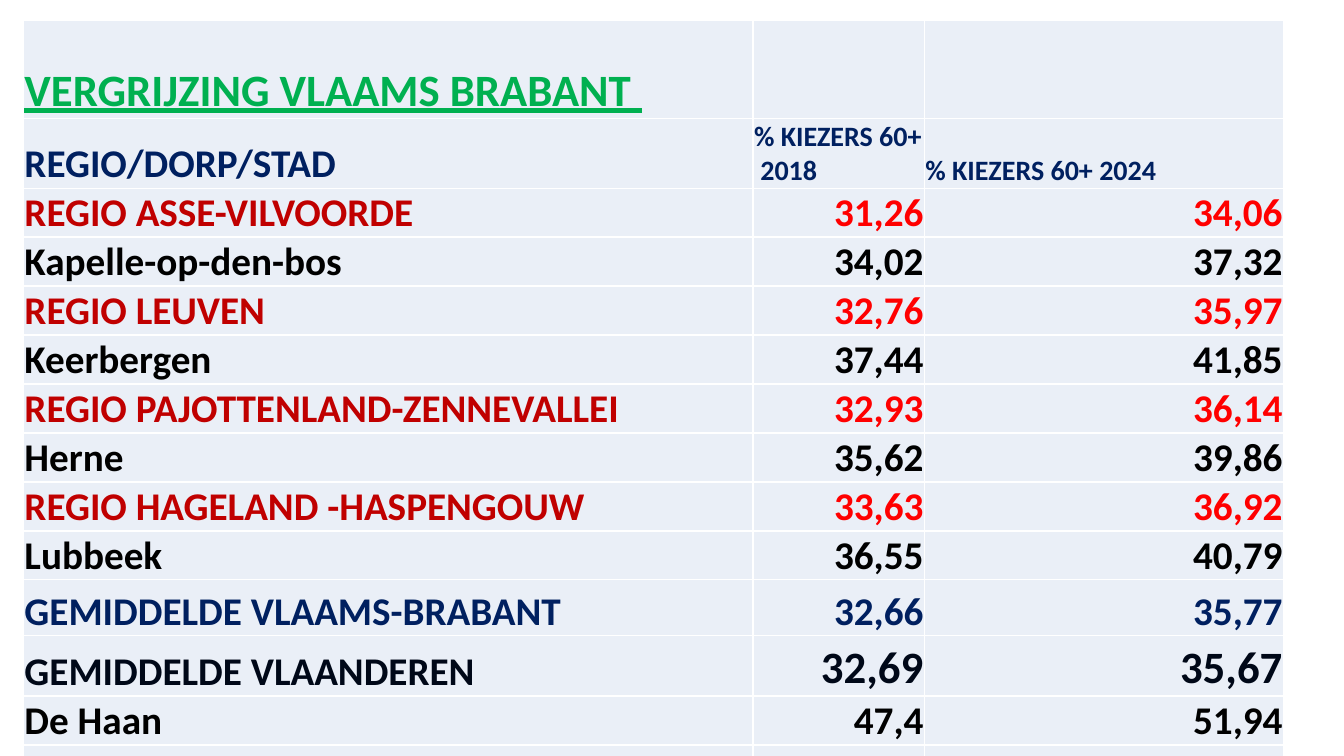
from lxml import etree
from pptx import Presentation
from pptx.dml.color import RGBColor
from pptx.enum.text import MSO_ANCHOR, PP_ALIGN
from pptx.oxml.ns import qn
from pptx.util import Pt

BOTTOM = MSO_ANCHOR.BOTTOM
LEFT, RIGHT = PP_ALIGN.LEFT, PP_ALIGN.RIGHT
FONT = "Calibri"
GREEN, NAVY, DARK_RED, RED = "00B050", "002060", "C00000", "FF0000"
BLACK, INK, WHITE, PALE_BLUE = "000000", "000818", "FFFFFF", "EAEFF7"

COLUMN_SHARES = (0.579, 0.136, 0.285)
TITLE_HEIGHT, HEADER_HEIGHT, LINE_HEIGHT, LAST_HEIGHT = 70, 50, 35, 31

TITLE = "VERGRIJZING VLAAMS BRABANT "
HEADERS = ("REGIO/DORP/STAD", "% KIEZERS 60+  2018", "% KIEZERS 60+ 2024")
REGION = (DARK_RED, RED, 28, LINE_HEIGHT)
TOWN = (BLACK, BLACK, 28, LINE_HEIGHT)
PROVINCE = (NAVY, NAVY, 28, 40)
FLANDERS = (INK, INK, 32, 43)
FIGURES = (
    (REGION, "REGIO ASSE-VILVOORDE", "31,26", "34,06"),
    (TOWN, "Kapelle-op-den-bos", "34,02", "37,32"),
    (REGION, "REGIO LEUVEN", "32,76", "35,97"),
    (TOWN, "Keerbergen", "37,44", "41,85"),
    (REGION, "REGIO PAJOTTENLAND-ZENNEVALLEI", "32,93", "36,14"),
    (TOWN, "Herne", "35,62", "39,86"),
    (REGION, "REGIO HAGELAND -HASPENGOUW", "33,63", "36,92"),
    (TOWN, "Lubbeek", "36,55", "40,79"),
    (PROVINCE, "GEMIDDELDE VLAAMS-BRABANT", "32,66", "35,77"),
    (FLANDERS, "GEMIDDELDE VLAANDEREN", "32,69", "35,67"),
    (TOWN, "De Haan", "47,4", "51,94"),
)


def color(value):
    return RGBColor.from_string(value)


def style_cell(cell):
    cell.margin_left = cell.margin_right = cell.margin_top = Pt(0.7)
    cell.margin_bottom = Pt(0)
    cell.vertical_anchor = BOTTOM
    cell.fill.solid()
    cell.fill.fore_color.rgb = color(PALE_BLUE)
    properties = cell._tc.get_or_add_tcPr()
    for index, side in enumerate(("a:lnL", "a:lnR", "a:lnT", "a:lnB")):
        border = etree.Element(qn(side), w=str(Pt(1)))
        fill = etree.SubElement(border, qn("a:solidFill"))
        etree.SubElement(fill, qn("a:srgbClr"), val=WHITE)
        properties.insert(index, border)


def write_cell(cell, text, size, text_color, alignment=LEFT, underline=False):
    cell.text_frame.text = text
    paragraph = cell.text_frame.paragraphs[0]
    paragraph.alignment = alignment
    font = paragraph.runs[0].font
    font.name = FONT
    font.size = Pt(size)
    font.bold = True
    font.underline = underline
    font.color.rgb = color(text_color)


def add_voter_table(slide, left, top, width):
    heights = [TITLE_HEIGHT, HEADER_HEIGHT]
    heights += [style[3] for style, *_ in FIGURES] + [LAST_HEIGHT]
    frame = slide.shapes.add_table(len(heights), len(COLUMN_SHARES), Pt(left),
                                   Pt(top), Pt(width), Pt(sum(heights)))
    table = frame.table
    table.first_row = table.horz_banding = False
    for column, share in zip(table.columns, COLUMN_SHARES):
        column.width = Pt(width * share)
    for row, height in zip(table.rows, heights):
        row.height = Pt(height)
    for cell in table.iter_cells():
        style_cell(cell)

    write_cell(table.cell(0, 0), TITLE, 32, GREEN, underline=True)
    for column, header in enumerate(HEADERS):
        write_cell(table.cell(1, column), header, 20 if column else 28, NAVY)
    for row, (style, name, *values) in enumerate(FIGURES, start=2):
        name_color, value_color, value_size, _ = style
        write_cell(table.cell(row, 0), name, 28, name_color)
        for column, value in enumerate(values, start=1):
            write_cell(table.cell(row, column), value, value_size, value_color, RIGHT)


def main():
    presentation = Presentation()
    presentation.slide_width = Pt(960)
    presentation.slide_height = Pt(540)
    slide = presentation.slides.add_slide(presentation.slide_layouts[6])
    add_voter_table(slide, 16.8, 14.4, 900)
    presentation.save("out.pptx")


if __name__ == "__main__":
    main()
